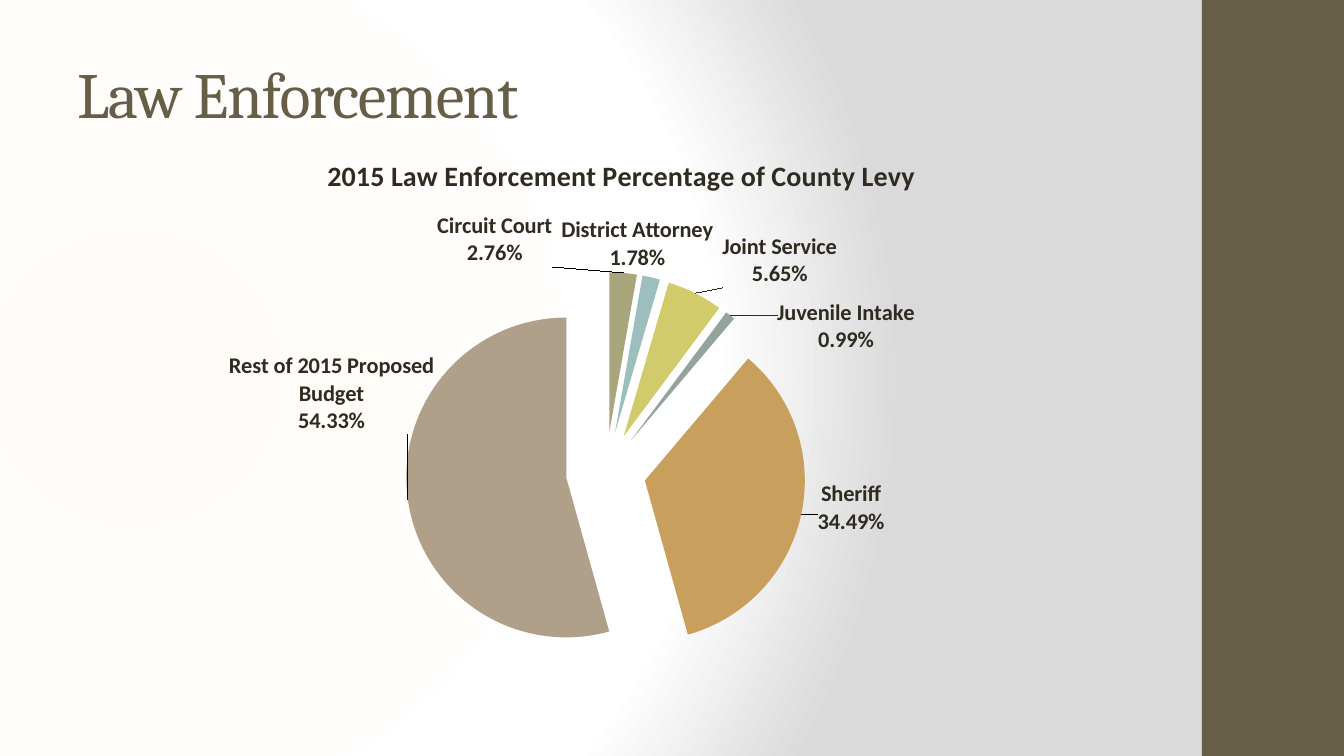
"""Build the Law Enforcement slide with its exploded pie of the 2015 county levy."""
from dataclasses import dataclass

from pptx import Presentation
from pptx.chart.data import CategoryChartData
from pptx.dml.color import RGBColor
from pptx.enum.chart import XL_CHART_TYPE
from pptx.enum.shapes import MSO_SHAPE
from pptx.enum.text import MSO_ANCHOR, MSO_AUTO_SIZE, PP_ALIGN
from pptx.oxml import parse_xml
from pptx.oxml.ns import nsdecls, qn
from pptx.util import Emu, Pt

PIE = XL_CHART_TYPE.PIE
RECTANGLE = MSO_SHAPE.RECTANGLE
MIDDLE = MSO_ANCHOR.MIDDLE
NO_FIT = MSO_AUTO_SIZE.NONE
LEFT = PP_ALIGN.LEFT
EMU_PER_PX = 914400 / 100.8
EXPLOSION = 25
PLOT_AREA = {"x": 0.098, "y": 0.235, "w": 0.775, "h": 0.68}

LEVY_SHARES = [
    ("Circuit Court", 2.76, "A9A57C"),
    ("District Attorney", 1.78, "9CBEBD"),
    ("Joint Service", 5.65, "D2CB6C"),
    ("Juvenile Intake", 0.99, "95A39D"),
    ("Sheriff", 34.49, "C89F5D"),
    ("Rest of 2015 Proposed Budget", 54.33, "B1A089"),
]
LABEL_OFFSETS = {0: (-0.12, 0), 4: (0.01, -0.06), 5: (0.03, -0.25)}


@dataclass(frozen=True)
class Theme:
    """Colours, fonts and type sizes of the slide."""
    olive: str = "675E47"
    ink: str = "2F2B20"
    backdrop: tuple = ((0, "FFFBF8"), (75, "FFFFFF"), (100, "DADADA"))
    heading_font: str = "Cambria"
    body_font: str = "Calibri"
    heading_size: int = 46
    chart_title_size: int = 20
    label_size: int = 16
    chart_size: int = 10


def px(length):
    """Turn whole pixels into EMU."""
    return Emu(round(length * EMU_PER_PX))


def apply(target, values):
    """Set each named attribute on the target."""
    for name, value in values.items():
        setattr(target, name, value)


class LevySlide:
    """Holds the theme and the current slide, and adds each kind of element."""

    def __init__(self, presentation, theme):
        self.theme = theme
        self.slide = presentation.slides.add_slide(presentation.slide_layouts[5])

    def style_font(self, font, name, size, color, bold=False):
        """Format a font from theme values."""
        apply(font, {"name": name, "size": Pt(size), "bold": bold})
        font.color.rgb = RGBColor.from_string(color)

    def add_backdrop(self):
        """Fill the background with a circular gradient."""
        stops = "".join(
            f'<a:gs pos="{place * 1000}"><a:srgbClr val="{color}"/></a:gs>'
            for place, color in self.theme.backdrop)
        self.slide.element.cSld.insert(0, parse_xml(
            f'<p:bg {nsdecls("p", "a")}><p:bgPr><a:gradFill rotWithShape="1">'
            f'<a:gsLst>{stops}</a:gsLst><a:path path="circle">'
            '<a:fillToRect l="20000" t="50000" r="100000" b="50000"/></a:path>'
            '</a:gradFill><a:effectLst/></p:bgPr></p:bg>'))

    def add_band(self, *box):
        """Draw a plain coloured band."""
        band = self.slide.shapes.add_shape(RECTANGLE, *map(px, box))
        band.shadow.inherit = False
        band.fill.solid()
        band.fill.fore_color.rgb = RGBColor.from_string(self.theme.olive)
        band.line.fill.background()

    def add_title(self, text, *box):
        """Place and format the title placeholder."""
        title = self.slide.shapes.title
        apply(title, dict(zip(("left", "top", "width", "height"), map(px, box))))
        apply(title.text_frame, {"text": text, "word_wrap": True,
                                 "vertical_anchor": MIDDLE, "auto_size": NO_FIT})
        heading = title.text_frame.paragraphs[0]
        heading.alignment = LEFT
        font = heading.runs[0].font
        self.style_font(font, self.theme.heading_font, self.theme.heading_size, self.theme.olive)
        heading.runs[0]._r.get_or_add_rPr().set("spc", "-100")

    def add_pie(self, title, shares, *box):
        """Add the exploded pie with its title and labels."""
        theme = self.theme
        levy = CategoryChartData()
        levy.categories = [name for name, _, _ in shares]
        levy.add_series("Series 1", [value for _, value, _ in shares])
        chart = self.slide.shapes.add_chart(PIE, *map(px, box), levy).chart
        self.style_font(chart.font, theme.body_font, theme.chart_size, theme.ink)
        apply(chart, {"has_legend": False, "has_title": True})
        chart.chart_title.include_in_layout = False
        chart.chart_title.text_frame.text = title
        self.style_font(chart.chart_title.text_frame.paragraphs[0].runs[0].font,
                        theme.body_font, theme.chart_title_size, theme.ink, True)
        plot = chart.plots[0]
        plot.vary_by_categories = True
        self.set_plot_area(chart._chartSpace.chart.plotArea)
        series = plot.series[0]
        for index, (_, _, color) in enumerate(shares):
            fill = series.points[index].format.fill
            fill.solid()
            fill.fore_color.rgb = RGBColor.from_string(color)
        slices = series._element
        slices.find(qn("c:dPt")).addprevious(
            parse_xml(f'<c:explosion {nsdecls("c")} val="{EXPLOSION}"/>'))
        slices.find(qn("c:cat")).addprevious(self.slice_labels())

    def set_plot_area(self, plot_area):
        """Fix the inner plot area as fractions of the chart."""
        for layout in plot_area.findall(qn("c:layout")):
            plot_area.remove(layout)
        modes = "".join(f'<c:{side}Mode val="edge"/>' for side in "xy")
        sizes = "".join(f'<c:{side} val="{part}"/>' for side, part in PLOT_AREA.items())
        plot_area.insert(0, parse_xml(
            f'<c:layout {nsdecls("c")}><c:manualLayout><c:layoutTarget val="inner"/>'
            f'{modes}{sizes}</c:manualLayout></c:layout>'))

    def slice_labels(self):
        """Return category and percent labels, some of them moved."""
        theme = self.theme
        shown = {"LegendKey": 0, "Val": 0, "CatName": 1, "SerName": 0,
                 "Percent": 1, "BubbleSize": 0}
        flags = "".join(f'<c:show{part} val="{on}"/>' for part, on in shown.items())
        style = (
            '<c:numFmt formatCode="0.00%" sourceLinked="0"/>'
            '<c:spPr><a:noFill/><a:ln><a:noFill/></a:ln></c:spPr>'
            f'<c:txPr><a:bodyPr/><a:p><a:pPr><a:defRPr sz="{theme.label_size * 100}" b="1">'
            f'<a:solidFill><a:srgbClr val="{theme.ink}"/></a:solidFill>'
            f'<a:latin typeface="{theme.body_font}"/></a:defRPr></a:pPr></a:p></c:txPr>'
            f'<c:dLblPos val="bestFit"/>{flags}<c:separator>\n</c:separator>')
        moved = "".join(
            f'<c:dLbl><c:idx val="{index}"/><c:layout><c:manualLayout>'
            f'<c:x val="{x}"/><c:y val="{y}"/></c:manualLayout></c:layout>{style}</c:dLbl>'
            for index, (x, y) in LABEL_OFFSETS.items())
        return parse_xml(f'<c:dLbls {nsdecls("c", "a")}>{moved}{style}'
                         '<c:showLeaderLines val="1"/></c:dLbls>')


def main():
    """Build and save the slide."""
    presentation = Presentation()
    apply(presentation, {"slide_width": px(1344), "slide_height": px(756)})
    page = LevySlide(presentation, Theme())
    page.add_backdrop()
    page.add_band(1202, 0, 142, 756)
    page.add_title("Law Enforcement", 67, 30, 1120, 126)
    page.add_pie("2015 Law Enforcement Percentage of County Levy", LEVY_SHARES,
                 84, 134, 1075, 588)
    presentation.save("out.pptx")


if __name__ == "__main__":
    main()
